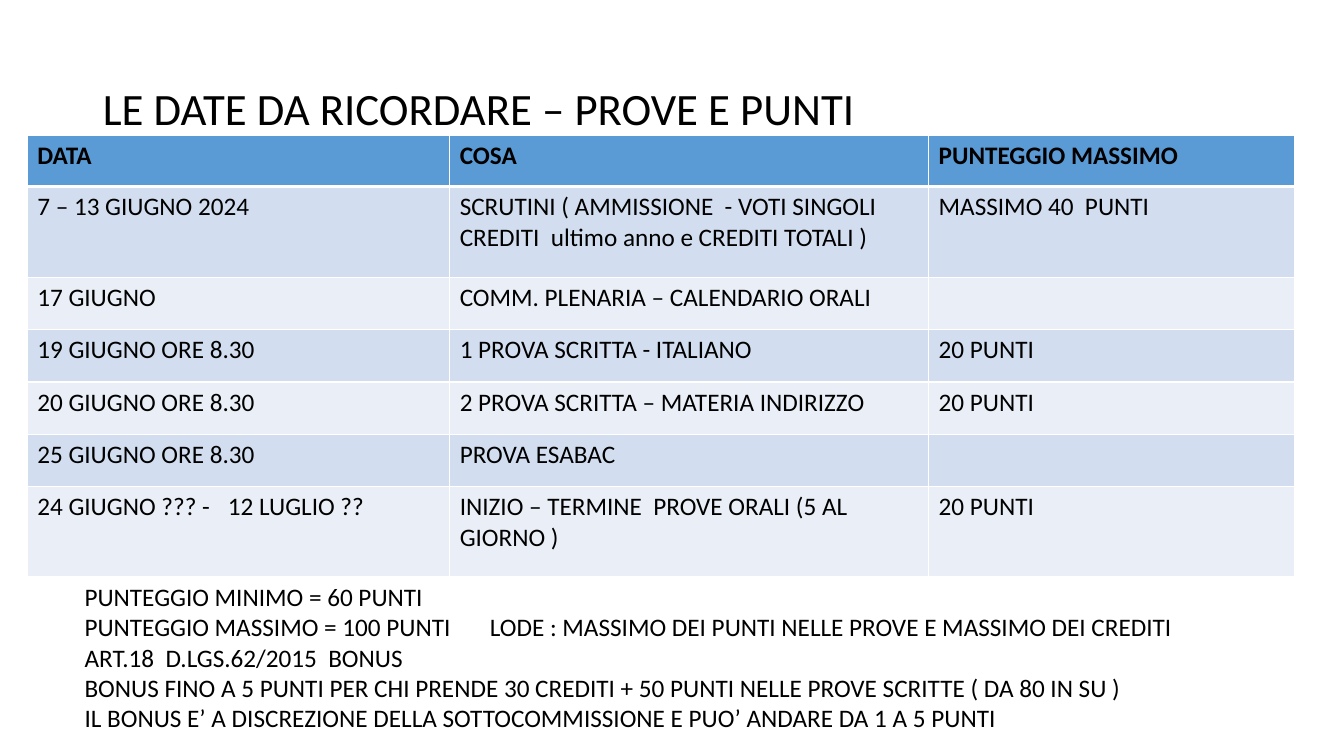
from lxml.etree import SubElement
from pptx import Presentation
from pptx.dml.color import RGBColor
from pptx.enum.text import MSO_ANCHOR, MSO_AUTO_SIZE, PP_ALIGN
from pptx.oxml.ns import qn
from pptx.util import Pt

EMU_PER_PX = 9144
BLACK, WHITE = "000000", "FFFFFF"
HEADER_FILL, BAND_FILLS = "5B9BD5", ("D2DEEF", "EAEFF7")
BODY_FONT = {"name": "Calibri", "size": Pt(18), "bold": False}
HEADER_FONT = {**BODY_FONT, "bold": True}
TITLE_FONT = {**BODY_FONT, "size": Pt(32)}

TITLE = "LE DATE DA RICORDARE – PROVE E PUNTI"
COLUMN_WIDTHS = (419, 475, 363)
ROW_HEIGHTS = (51, 90, 52, 52, 52, 52, 89)
DATES = (
    ("DATA", "COSA", "PUNTEGGIO MASSIMO"),
    ("7 – 13 GIUGNO 2024",
     "SCRUTINI ( AMMISSIONE  - VOTI SINGOLI CREDITI  ultimo anno e CREDITI TOTALI )",
     "MASSIMO 40  PUNTI"),
    ("17 GIUGNO", "COMM. PLENARIA – CALENDARIO ORALI", ""),
    ("19 GIUGNO ORE 8.30", "1 PROVA SCRITTA - ITALIANO", "20 PUNTI"),
    ("20 GIUGNO ORE 8.30", "2 PROVA SCRITTA – MATERIA INDIRIZZO", "20 PUNTI"),
    ("25 GIUGNO ORE 8.30", "PROVA ESABAC", ""),
    ("24 GIUGNO ??? -\t12 LUGLIO ??",
     "INIZIO – TERMINE  PROVE ORALI (5 AL GIORNO )", "20 PUNTI"),
)
DATE_TAB, HONOURS_TAB = 189, 402
SCORING_RULES = (
    "PUNTEGGIO MINIMO = 60 PUNTI",
    "PUNTEGGIO MASSIMO = 100 PUNTI\tLODE : MASSIMO DEI PUNTI NELLE PROVE E MASSIMO DEI CREDITI",
    "ART.18  D.LGS.62/2015  BONUS",
    "BONUS FINO A 5 PUNTI PER CHI PRENDE 30 CREDITI + 50 PUNTI NELLE PROVE SCRITTE ( DA 80 IN SU )",
    "IL BONUS E’ A DISCREZIONE DELLA SOTTOCOMMISSIONE E PUO’ ANDARE DA 1 A 5 PUNTI",
)


def px(length):
    """Turn a length in px into EMU."""
    return length * EMU_PER_PX


def set_color(color_format, value):
    """Give a colour format a hex colour."""
    color_format.rgb = RGBColor.from_string(value)


def set_fill(fill, value):
    """Fill solidly with a hex colour."""
    fill.solid()
    set_color(fill.fore_color, value)


def write(paragraph, text, font, tab):
    """Write one formatted run, with a tab stop where the text needs one."""
    if "\t" in text:
        tabs = SubElement(paragraph._p.get_or_add_pPr(), qn("a:tabLst"))
        SubElement(tabs, qn("a:tab"), pos=str(px(tab)), algn="l")
    run = paragraph.add_run()
    run.text = text
    for name, value in font.items():
        setattr(run.font, name, value)
    set_color(run.font.color, BLACK)


def add_borders(cell, bottom_width):
    """Draw white borders around a table cell."""
    properties = cell._tc.get_or_add_tcPr()
    for side, width in (("L", 1), ("R", 1), ("T", 1), ("B", bottom_width)):
        line = SubElement(properties, qn(f"a:ln{side}"), w=str(Pt(width)))
        fill = SubElement(line, qn("a:solidFill"))
        SubElement(fill, qn("a:srgbClr"), val=WHITE)


def add_title(slide, left, top, width, height):
    """Place the heading in the title placeholder."""
    title = slide.shapes.title
    box = {"left": left, "top": top, "width": width, "height": height}
    for name, value in box.items():
        setattr(title, name, px(value))
    frame = title.text_frame
    frame.auto_size = MSO_AUTO_SIZE.NONE
    frame.vertical_anchor = MSO_ANCHOR.MIDDLE
    paragraph = frame.paragraphs[0]
    paragraph.alignment = PP_ALIGN.LEFT
    paragraph.line_spacing = 0.9
    write(paragraph, TITLE, TITLE_FONT, 0)


def add_dates_table(slide, left, top):
    """Place the banded table of exam dates and points."""
    table = slide.shapes.add_table(
        len(DATES), len(COLUMN_WIDTHS), px(left), px(top),
        px(sum(COLUMN_WIDTHS)), px(sum(ROW_HEIGHTS))).table
    for column, width in zip(table.columns, COLUMN_WIDTHS):
        column.width = px(width)
    for index, (row, height, texts) in enumerate(zip(table.rows, ROW_HEIGHTS, DATES)):
        row.height = px(height)
        is_header = index == 0
        for cell, text in zip(row.cells, texts):
            add_borders(cell, 3 if is_header else 1)
            set_fill(cell.fill, HEADER_FILL if is_header else BAND_FILLS[(index - 1) % 2])
            if text:
                write(cell.text_frame.paragraphs[0], text,
                      HEADER_FONT if is_header else BODY_FONT, DATE_TAB)


def add_scoring_rules(slide, left, top, width, height):
    """Place the scoring rules below the table."""
    frame = slide.shapes.add_textbox(px(left), px(top), px(width), px(height)).text_frame
    frame.word_wrap = True
    for index, text in enumerate(SCORING_RULES):
        paragraph = frame.add_paragraph() if index else frame.paragraphs[0]
        write(paragraph, text, BODY_FONT, HONOURS_TAB)


def main():
    """Build and save the slide."""
    presentation = Presentation()
    presentation.slide_width, presentation.slide_height = px(1333), px(750)
    slide = presentation.slides.add_slide(presentation.slide_layouts[5])
    set_fill(slide.background.fill, WHITE)
    add_title(slide, 92, 36, 1150, 149)
    add_dates_table(slide, 27, 134)
    add_scoring_rules(slide, 74, 572, 1132, 162)
    presentation.save("out.pptx")


if __name__ == "__main__":
    main()
